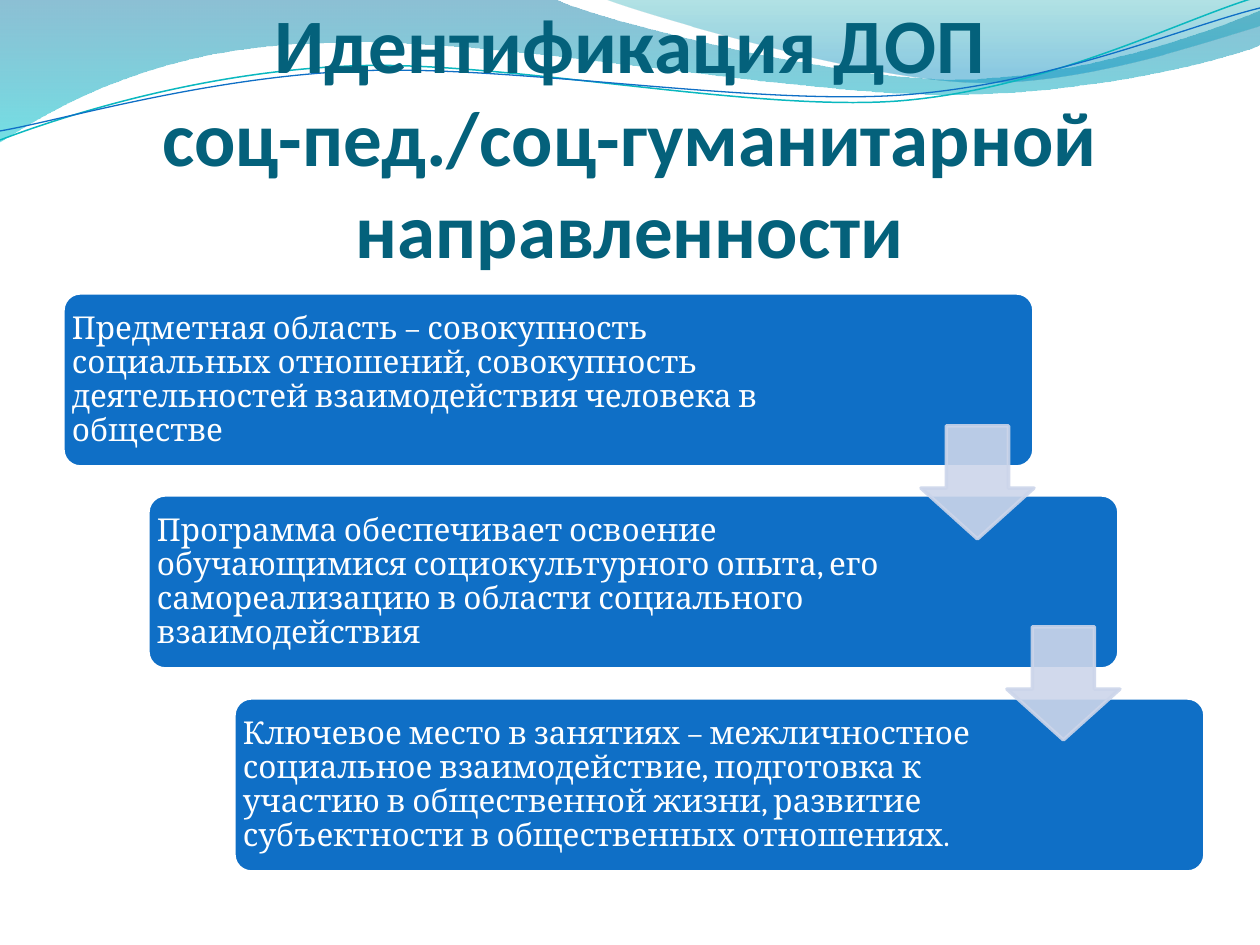
from dataclasses import dataclass

from lxml import etree
from pptx import Presentation
from pptx import util as u
from pptx.dml.color import RGBColor
from pptx.enum import lang, shapes, text
from pptx.oxml.ns import qn


@dataclass(frozen=True)
class Theme:
    blue: str = "0F6FC6"
    teal: str = "0AB8BF"
    pale: str = "CCD5EA"
    white: str = "FFFFFF"
    dark: str = "04617B"
    head: str = "Calibri"
    body: str = "Cambria"
    big: int = 44
    small: int = 18


def write(frame, words, *, font, size, color, bold=False, align=text.PP_ALIGN.LEFT,
          anchor=text.MSO_ANCHOR.MIDDLE, inset=(9, 9, 9, 9), space=1.0):
    frame.word_wrap = True
    frame.auto_size = text.MSO_AUTO_SIZE.NONE
    frame.vertical_anchor = anchor
    sides = ("left", "top", "right", "bottom")
    for side, gap in zip(sides, inset):
        setattr(frame, f"margin_{side}", gap * PX)
    para = frame.paragraphs[0]
    para.alignment = align
    para.line_spacing = space
    run = para.add_run()
    run.text = words
    run.font.name = font
    run.font.size = u.Pt(size)
    run.font.bold = bold
    run.font.color.rgb = RGBColor.from_string(color)
    run.font.language_id = lang.MSO_LANGUAGE_ID.RUSSIAN


def fade(node, *levels):
    for color, level in zip(node.iter(qn("a:srgbClr")), levels):
        etree.SubElement(color, qn("a:alpha")).set("val", str(level * 1000))


PX = u.Inches(1) // 126
look = Theme()
deck = Presentation()
deck.slide_width, deck.slide_height = u.Inches(10), u.Inches(7.5)
slide = deck.slides.add_slide(deck.slide_layouts[5])
items = slide.shapes
title = items.title

waves = [
    ((0, 0), [(554, -1), (600, 21, 837, 79, 955, 79), (1075, 79, 1207, 33, 1260, 11),
              (1261, 45), (1239, 55, 1096, 96, 940, 94), (784, 94, 481, 35, 324, 43),
              (163, 45, 58, 105, -1, 142), (0, 0)],
     [(0, "0074A1", 45), (1, "00C6CF", 55)], None),
    ((604, -1), [(641, 14, 859, 78, 969, 82), (1079, 87, 1211, 40, 1260, 26),
                 (1260, 0), (604, -1)],
     [(0, "00A1A9", 30), (0.8, "008BBF", 45)], None),
    ((0, 140), [(60, 117, 199, 72, 349, 66), (498, 59, 747, 112, 898, 101),
                (1049, 89, 1182, 19, 1257, -3)], None, (look.teal, 0.85)),
    ((0, 131), [(59, 121, 207, 77, 357, 71), (508, 64, 752, 106, 903, 95),
                (1053, 84, 1186, 26, 1260, 8)], None, (look.blue, 0.75)),
]
for start, parts, blend, pen in waves:
    dots = [pair for part in parts for pair in zip(part[::2], part[1::2])]
    build = items.build_freeform(*start, scale=PX)
    build.add_line_segments(dots, close=blend is not None)
    wave = build.convert_to_shape()
    wave.shadow.inherit = False
    lines = iter(list(wave._element.iter(qn("a:lnTo"))))
    for part in parts:
        line = next(lines)
        if len(part) == 6:
            curve = etree.Element(qn("a:cubicBezTo"))
            line.addprevious(curve)
            for piece in (line, next(lines), next(lines)):
                curve.append(piece[0])
                piece.getparent().remove(piece)
    if blend:
        wave.line.fill.background()
        wave.fill.gradient()
        wave.fill.gradient_angle = 270
        for stop, (place, color, _) in zip(wave.fill.gradient_stops, blend):
            stop.position = place
            stop.color.rgb = RGBColor.from_string(color)
        fade(wave._element.spPr, *(level for *_, level in blend))
    else:
        wave.fill.background()
        wave.line.color.rgb = RGBColor.from_string(pen[0])
        wave.line.width = u.Pt(pen[1])

items._spTree.append(title._element)
title.left, title.top, title.width, title.height = 63 * PX, 96 * PX, 1134 * PX, 178 * PX
write(title.text_frame, "Идентификация ДОП соц-пед./соц-гуманитарной направленности",
      font=look.head, size=look.big, color=look.dark, bold=True,
      align=text.PP_ALIGN.CENTER, anchor=text.MSO_ANCHOR.BOTTOM, inset=(0, 6, 0, 0))

steps = [
    ("Предметная область – совокупность социальных отношений, совокупность "
     "деятельностей взаимодействия человека в обществе", 794),
    ("Программа обеспечивает освоение обучающимися социокультурного опыта, его "
     "самореализацию в области социального взаимодействия", 772),
    ("Ключевое место в занятиях – межличностное социальное взаимодействие, подготовка к "
     "участию в общественной жизни, развитие субъектности в общественных отношениях.", 772),
]
for row, (words, wide) in enumerate(steps):
    left, top, high = (63 + 171 * row // 2) * PX, (293 + 405 * row // 2) * PX, 174 * PX
    card = items.add_shape(shapes.MSO_SHAPE.ROUNDED_RECTANGLE, left, top, 971 * PX, high)
    card.adjustments[0] = 0.1
    card.shadow.inherit = False
    card.fill.solid()
    card.fill.fore_color.rgb = RGBColor.from_string(look.blue)
    card.line.color.rgb = RGBColor.from_string(look.white)
    card.line.width = u.Pt(2)
    label = items.add_textbox(left, top, wide * PX, high)
    write(label.text_frame, words, font=look.body, size=look.small,
          color=look.white, space=0.9)

for row in range(len(steps) - 1):
    arrow = items.add_shape(shapes.MSO_SHAPE.DOWN_ARROW, (921 + 86 * row) * PX,
                            (426 + 201 * row) * PX, 113 * PX, 113 * PX)
    arrow.adjustments[0], arrow.adjustments[1] = 0.55, 0.45
    arrow.shadow.inherit = False
    arrow.fill.solid()
    arrow.fill.fore_color.rgb = RGBColor.from_string(look.pale)
    arrow.line.color.rgb = RGBColor.from_string(look.pale)
    arrow.line.width = u.Pt(2)
    fade(arrow._element.spPr, 90, 90)

deck.save("out.pptx")
